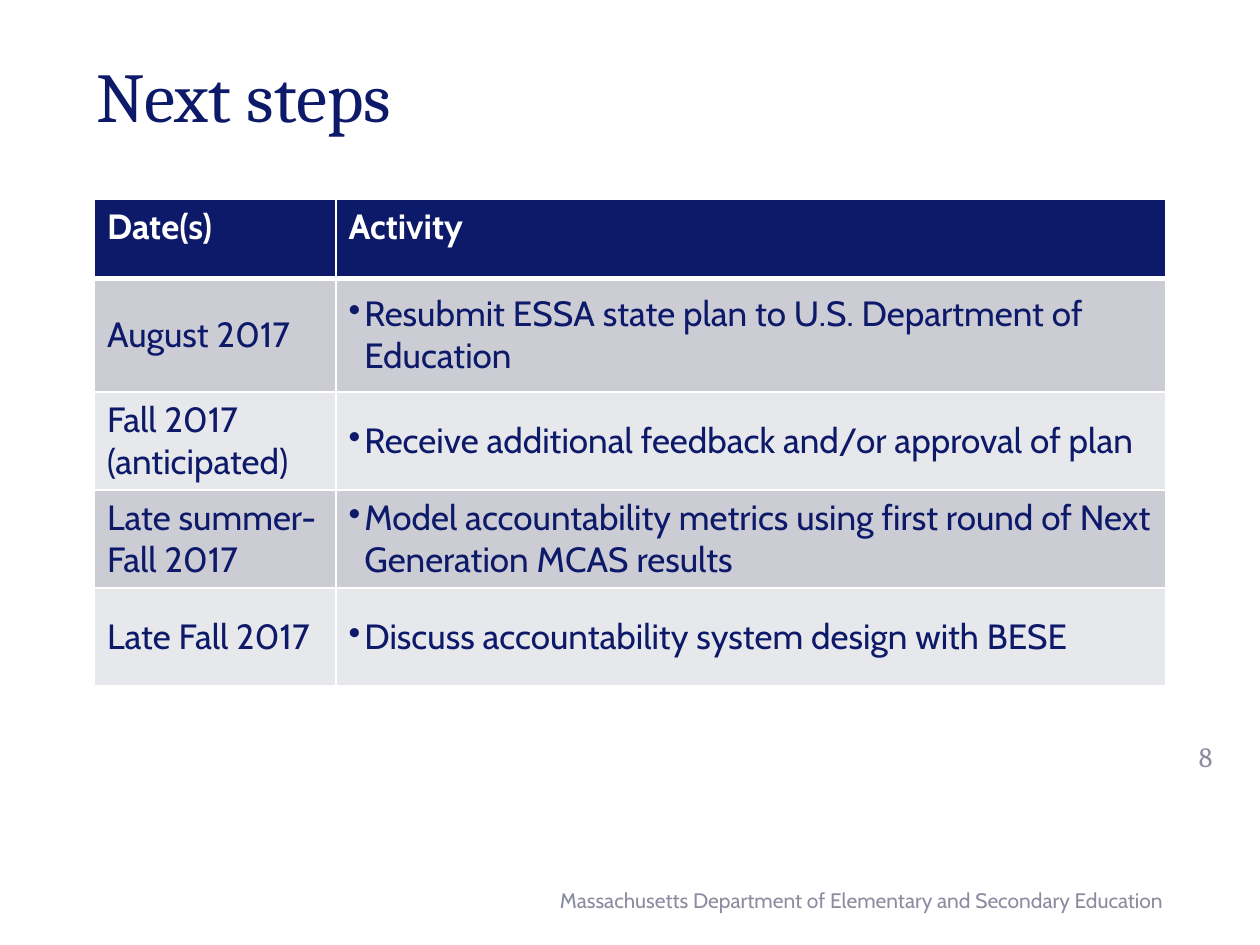
"""Build the "Next steps" slide with its table of dates and activities."""
import pptx
import pptx.dml.color
import pptx.enum.text
import pptx.oxml
import pptx.oxml.ns
import pptx.util

Pt = pptx.util.Pt
RGBColor = pptx.dml.color.RGBColor
ALIGN = pptx.enum.text.PP_ALIGN
ANCHOR = pptx.enum.text.MSO_ANCHOR

NAVY = RGBColor(0x0D, 0x19, 0x69)
WHITE = RGBColor(0xFF, 0xFF, 0xFF)
MUTED = RGBColor(0x8C, 0x8C, 0xA1)
DARK_BAND = RGBColor(0xCC, 0xCC, 0xD4)
LIGHT_BAND = RGBColor(0xE7, 0xE8, 0xEB)

ROWS = [
    ("Date(s)", "Activity"),
    ("August 2017", "Resubmit ESSA state plan to U.S. Department of Education"),
    ("Fall 2017 (anticipated)", "Receive additional feedback and/or approval of plan"),
    ("Late summer-Fall 2017",
     "Model accountability metrics using first round of Next Generation MCAS results"),
    ("Late Fall 2017", "Discuss accountability system design with BESE"),
]
COLUMN_WIDTHS = [138, 474]
ROW_HEIGHTS = [45, 65, 56, 56, 56]


def write(frame, text, size=20, font="Cabin", color=NAVY, bold=False,
          align=ALIGN.LEFT, bullet=False):
    frame.word_wrap = True
    paragraph = frame.paragraphs[0]
    paragraph.alignment = align
    if bullet:
        properties = paragraph._p.get_or_add_pPr()
        properties.set("marL", str(Pt(9)))
        properties.set("indent", str(Pt(-9)))
        properties.append(pptx.oxml.parse_xml(
            f'<a:buChar {pptx.oxml.ns.nsdecls("a")} char="•"/>'))
    run = paragraph.add_run()
    run.text = text
    run.font.size = Pt(size)
    run.font.name = font
    run.font.bold = bold
    run.font.color.rgb = color


def add_border(cell, side, width):
    cell._tc.get_or_add_tcPr().append(pptx.oxml.parse_xml(
        f'<a:ln{side} {pptx.oxml.ns.nsdecls("a")} w="{Pt(width)}">'
        f'<a:solidFill><a:srgbClr val="{WHITE}"/></a:solidFill></a:ln{side}>'))


presentation = pptx.Presentation()
presentation.slide_width = Pt(720)
presentation.slide_height = Pt(540)
slide = presentation.slides.add_slide(presentation.slide_layouts[6])

text_boxes = [
    ((48, 18, 624, 72), "Next steps", dict(size=40, font="Cambria")),
    ((246, 500, 426, 29), "Massachusetts Department of Elementary and Secondary Education",
     dict(size=12, color=MUTED, align=ALIGN.RIGHT)),
    ((668, 414, 42, 36), "8",
     dict(size=16, font="Cambria", color=MUTED, align=ALIGN.CENTER)),
]
for box, text, text_format in text_boxes:
    frame = slide.shapes.add_textbox(*map(Pt, box)).text_frame
    frame.vertical_anchor = ANCHOR.MIDDLE
    write(frame, text, **text_format)

table = slide.shapes.add_table(
    len(ROWS), len(COLUMN_WIDTHS), Pt(54), Pt(114),
    Pt(sum(COLUMN_WIDTHS)), Pt(sum(ROW_HEIGHTS))).table
for column, width in zip(table.columns, COLUMN_WIDTHS):
    column.width = Pt(width)
for row, height in zip(table.rows, ROW_HEIGHTS):
    row.height = Pt(height)

for row_index, texts in enumerate(ROWS):
    header = row_index == 0
    band = NAVY if header else DARK_BAND if row_index % 2 else LIGHT_BAND
    for column_index, text in enumerate(texts):
        cell = table.cell(row_index, column_index)
        add_border(cell, "L", 1)
        add_border(cell, "R", 1)
        add_border(cell, "T", 3 if row_index == 1 else 1)
        add_border(cell, "B", 3 if header else 1)
        cell.fill.solid()
        cell.fill.fore_color.rgb = band
        cell.vertical_anchor = ANCHOR.TOP if header else ANCHOR.MIDDLE
        write(cell.text_frame, text, color=WHITE if header else NAVY, bold=header,
              bullet=column_index == 1 and not header)

presentation.save("out.pptx")
